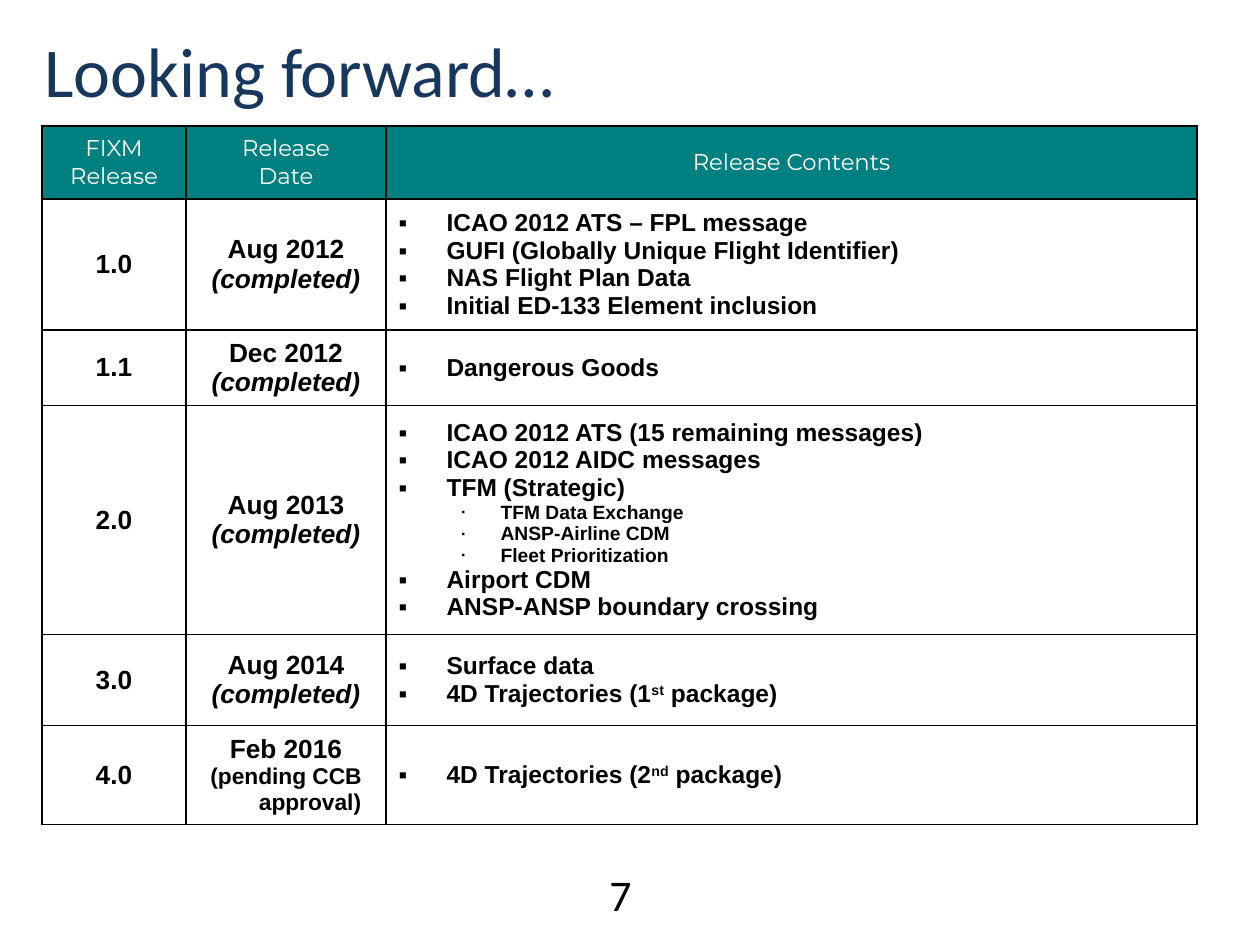
from lxml.etree import SubElement
from pptx import Presentation
from pptx.dml.color import RGBColor
from pptx.enum.text import MSO_ANCHOR, PP_ALIGN
from pptx.oxml.ns import qn
from pptx.util import Pt

PX = 914400 // 126
COLORS = {"navy": "17375E", "teal": "008080", "white": "FFFFFF", "black": "000000"}

TITLE = {"size": Pt(40), "name": "Calibri", "bold": False, "color": "navy"}
NUMBER = {"size": Pt(25), "name": "Calibri", "color": "black"}
HEADER = {"size": Pt(13), "name": "Montserrat", "bold": False, "color": "white"}
LABEL = {"size": Pt(15), "name": "Arial", "bold": True, "color": "black"}
STATUS = {**LABEL, "italic": True}
PENDING = {**LABEL, "size": Pt(13)}
ITEM = {**LABEL, "size": Pt(14)}
SUBITEM = {**LABEL, "size": Pt(11)}

HEADINGS = [["FIXM", "Release"], ["Release", "Date"], ["Release Contents"]]
COMPLETED = ("(completed)", STATUS)
# Carets enclose superscripts; a nested list holds second-level items.
RELEASES = [
    ("1.0", "Aug 2012", COMPLETED, [
        "ICAO 2012 ATS – FPL message",
        "GUFI (Globally Unique Flight Identifier)",
        "NAS Flight Plan Data",
        "Initial ED-133 Element inclusion",
    ]),
    ("1.1", "Dec 2012", COMPLETED, ["Dangerous Goods"]),
    ("2.0", "Aug 2013", COMPLETED, [
        "ICAO 2012 ATS (15 remaining messages)",
        "ICAO 2012 AIDC messages",
        "TFM (Strategic)",
        ["TFM Data Exchange", "ANSP-Airline CDM", "Fleet Prioritization"],
        "Airport CDM",
        "ANSP-ANSP boundary crossing",
    ]),
    ("3.0", "Aug 2014", COMPLETED, ["Surface data", "4D Trajectories (1^st^ package)"]),
    ("4.0", "Feb 2016", ("(pending CCB approval)", PENDING),
     ["4D Trajectories (2^nd^ package)"]),
]
COLUMN_WIDTHS = [144, 200, 811]
ROW_HEIGHTS = [73, 131, 75, 229, 91, 99]


def px(*lengths):
    return [length * PX for length in lengths]


def rgb(color):
    return RGBColor.from_string(COLORS[color])


def format_font(font, style):
    for name, value in style.items():
        if name == "color":
            font.color.rgb = rgb(value)
        else:
            setattr(font, name, value)


def add_runs(paragraph, text, style):
    """Write text, raising every part enclosed in carets."""
    for index, part in enumerate(text.split("^")):
        run = paragraph.add_run()
        run.text = part
        format_font(run.font, style)
        if index % 2:
            run._r.get_or_add_rPr().set("baseline", "30000")


def set_indent(paragraph, left, hanging):
    properties = paragraph._p.get_or_add_pPr()
    properties.set("marL", str(left * PX))
    properties.set("indent", str(-hanging * PX))
    return properties


def add_bullet(paragraph, level):
    paragraph.level = level
    properties = set_indent(paragraph, *[(48, 48), (102, 39)][level])
    if level:
        SubElement(properties, qn("a:buSzPct"), val="50000")
    SubElement(properties, qn("a:buFont"), typeface="Arial")
    SubElement(properties, qn("a:buChar"), char="▪")


def fill_cell(cell, lines, color="white", bulleted=False):
    """Write (text, style, level) lines into a bordered cell."""
    cell.vertical_anchor = MSO_ANCHOR.MIDDLE
    properties = cell._tc.get_or_add_tcPr()
    for side in ("lnL", "lnR", "lnT", "lnB"):
        border = SubElement(properties, qn(f"a:{side}"), w=str(Pt(1)))
        solid = SubElement(border, qn("a:solidFill"))
        SubElement(solid, qn("a:srgbClr"), val=COLORS["black"])
    cell.fill.solid()
    cell.fill.fore_color.rgb = rgb(color)
    frame = cell.text_frame
    for index, (text, style, level) in enumerate(lines):
        paragraph = frame.add_paragraph() if index else frame.paragraphs[0]
        if bulleted:
            add_bullet(paragraph, level)
        else:
            paragraph.alignment = PP_ALIGN.CENTER
            set_indent(paragraph, 48, 48)
        add_runs(paragraph, text, style)


def content_lines(items):
    for item in items:
        if isinstance(item, list):
            yield from ((text, SUBITEM, 1) for text in item)
        else:
            yield item, ITEM, 0


def add_release_table(slide):
    frame = slide.shapes.add_table(
        len(ROW_HEIGHTS), len(COLUMN_WIDTHS),
        *px(42, 126, sum(COLUMN_WIDTHS), sum(ROW_HEIGHTS)))
    table = frame.table
    for column, width in zip(table.columns, px(*COLUMN_WIDTHS)):
        column.width = width
    for row, height in zip(table.rows, px(*ROW_HEIGHTS)):
        row.height = height
    for column, heading in enumerate(HEADINGS):
        fill_cell(table.cell(0, column), [(text, HEADER, 0) for text in heading], "teal")
    for row, (release, date, status, items) in enumerate(RELEASES, 1):
        fill_cell(table.cell(row, 0), [(release, LABEL, 0)])
        fill_cell(table.cell(row, 1), [(date, LABEL, 0), (*status, 0)])
        fill_cell(table.cell(row, 2), content_lines(items), bulleted=True)


def add_title(slide, text):
    title = slide.shapes.title
    title.left, title.top, title.width, title.height = px(32, 21, 714, 97)
    title.text_frame.vertical_anchor = MSO_ANCHOR.TOP
    paragraph = title.text_frame.paragraphs[0]
    paragraph.alignment = PP_ALIGN.LEFT
    add_runs(paragraph, text, TITLE)


def add_page_number(slide, text):
    frame = slide.shapes.add_textbox(*px(597, 861, 47, 66)).text_frame
    frame.word_wrap = False
    frame.vertical_anchor = MSO_ANCHOR.MIDDLE
    paragraph = frame.paragraphs[0]
    paragraph.alignment = PP_ALIGN.JUSTIFY
    add_runs(paragraph, text, NUMBER)


def main():
    presentation = Presentation()
    presentation.slide_width, presentation.slide_height = px(1260, 945)
    slide = presentation.slides.add_slide(presentation.slide_layouts[5])
    add_title(slide, "Looking forward…")
    add_page_number(slide, "7")
    add_release_table(slide)
    presentation.save("out.pptx")


if __name__ == "__main__":
    main()
